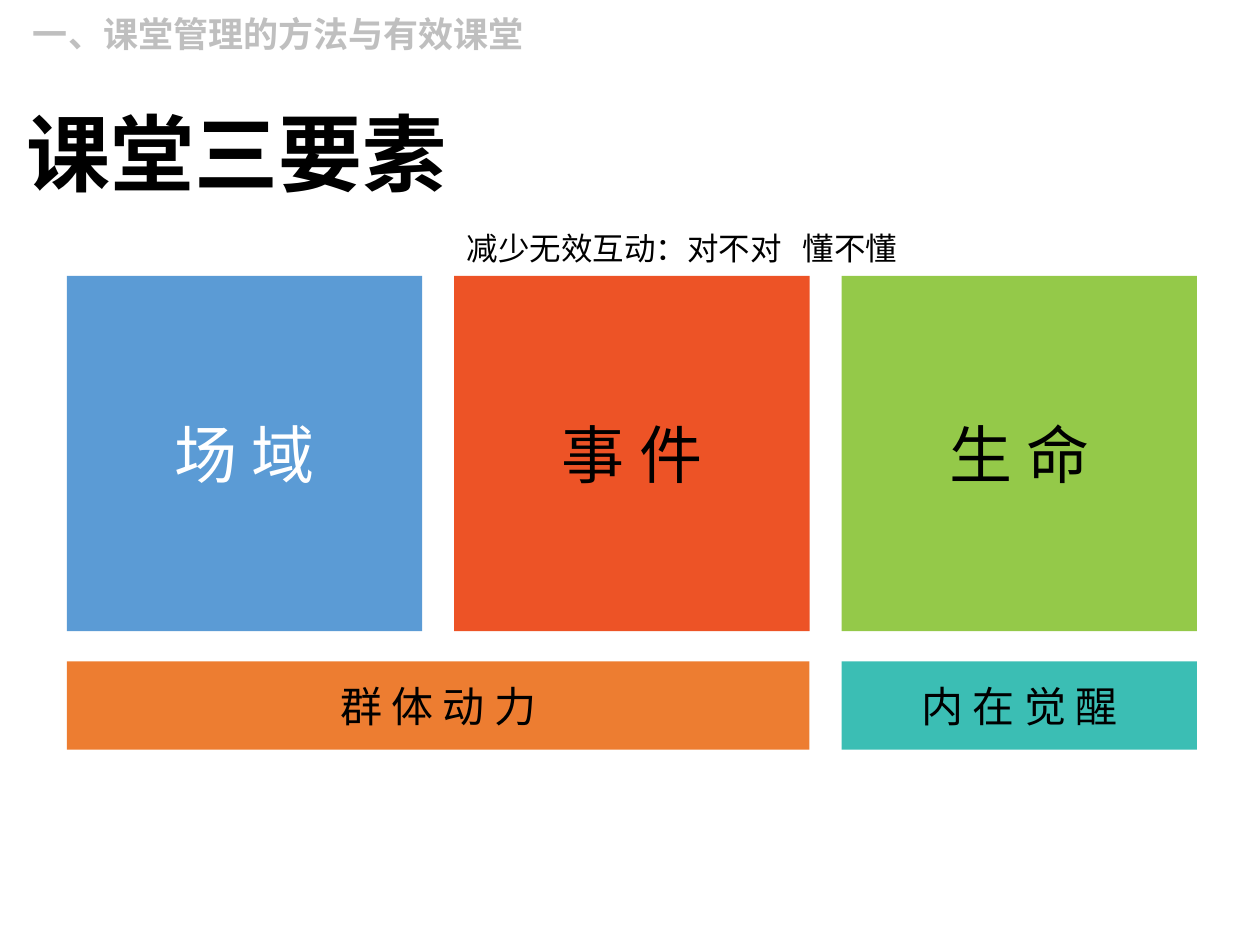
from dataclasses import dataclass

from lxml import etree
from pptx import Presentation
from pptx import util as u
from pptx.dml.color import RGBColor
from pptx.enum import shapes, text
from pptx.oxml.ns import qn

CJK = "Noto Sans CJK SC"
LEFT, PITCH, SQUARE = 0.53, 3.075, 2.82  # column grid, inches
ROW_TOPS = (2.19, 5.25)
ROW_HEIGHTS = (SQUARE, 0.7)
ROW_SIZES = (36, 24)


@dataclass
class Block:
    label: str
    column: int
    row: int
    fill: str
    ink: str = "000000"
    span: int = 1


BLOCKS = [
    Block("场 域", 0, 0, "5B9BD5", ink="FFFFFF"),
    Block("事 件", 1, 0, "ED5326"),
    Block("生 命", 2, 0, "94C949"),
    Block("群 体 动 力", 0, 1, "ED7D31", span=2),
    Block("内 在 觉 醒", 2, 1, "3BBEB4"),
]


def color(hex_value: str) -> RGBColor:
    return RGBColor.from_string(hex_value)


def write(shape, words: str, size: float, ink: str, bold: bool = False,
          align=text.PP_ALIGN.LEFT, latin: str = CJK):
    """Set one styled line; Chinese glyphs always use the CJK font."""
    shape.text_frame.text = words
    line = shape.text_frame.paragraphs[0]
    line.alignment = align
    font = line.runs[0].font
    font.size, font.bold, font.name = u.Pt(size), bold, latin
    font.color.rgb = color(ink)
    east_asian = etree.Element(qn("a:ea"), typeface=CJK)
    font._element.find(qn("a:latin")).addnext(east_asian)
    return line


def set_margins(frame, across: float, down: float) -> None:
    frame.margin_left = frame.margin_right = u.Inches(across)
    frame.margin_top = frame.margin_bottom = u.Inches(down)


def add_block(slide, block: Block) -> None:
    width = SQUARE + (block.span - 1) * PITCH
    shape = slide.shapes.add_shape(
        shapes.MSO_SHAPE.RECTANGLE,
        u.Inches(LEFT + block.column * PITCH), u.Inches(ROW_TOPS[block.row]),
        u.Inches(width), u.Inches(ROW_HEIGHTS[block.row]))
    shape.shadow.inherit = False
    shape.fill.solid()
    shape.fill.fore_color.rgb = color(block.fill)
    shape.line.fill.background()
    set_margins(shape.text_frame, 0.08, 0.04)
    shape.text_frame.vertical_anchor = text.MSO_ANCHOR.MIDDLE
    write(shape, block.label, ROW_SIZES[block.row], block.ink,
          align=text.PP_ALIGN.CENTER)


def add_title(slide) -> None:
    title = slide.shapes.title
    title.left, title.top = u.Inches(0.21), u.Inches(0.9)
    title.width, title.height = u.Inches(7.35), u.Inches(0.73)
    line = write(title, "课堂三要素", 48, "000000", bold=True)
    line.line_spacing = 0.9
    frame = title.text_frame
    set_margins(frame, 0, 0)
    frame.vertical_anchor = text.MSO_ANCHOR.TOP
    frame.auto_size = text.MSO_AUTO_SIZE.SHAPE_TO_FIT_TEXT


def add_caption(slide, left: float, top: float, width: float, height: float,
                wrap: bool, words: str, size: float, ink: str, **style) -> None:
    box = slide.shapes.add_textbox(*map(u.Inches, (left, top, width, height)))
    box.text_frame.word_wrap = wrap
    box.text_frame.auto_size = text.MSO_AUTO_SIZE.SHAPE_TO_FIT_TEXT
    write(box, words, size, ink, **style)


def main() -> None:
    deck = Presentation()
    deck.slide_width, deck.slide_height = u.Inches(10), u.Inches(7.5)
    slide = deck.slides.add_slide(deck.slide_layouts.get_by_name("Title Only"))
    add_title(slide)
    for block in BLOCKS:
        add_block(slide, block)
    add_caption(slide, -2.53, 0.05, 9.48, 0.44, True,
                "一、课堂管理的方法与有效课堂", 20, "BFBFBF",
                bold=True, align=text.PP_ALIGN.CENTER)
    add_caption(slide, LEFT + PITCH, 1.77, 3.95, 0.4, False,
                "减少无效互动：对不对   懂不懂", 18, "000000", latin="Calibri")
    deck.save("out.pptx")


if __name__ == "__main__":
    main()
